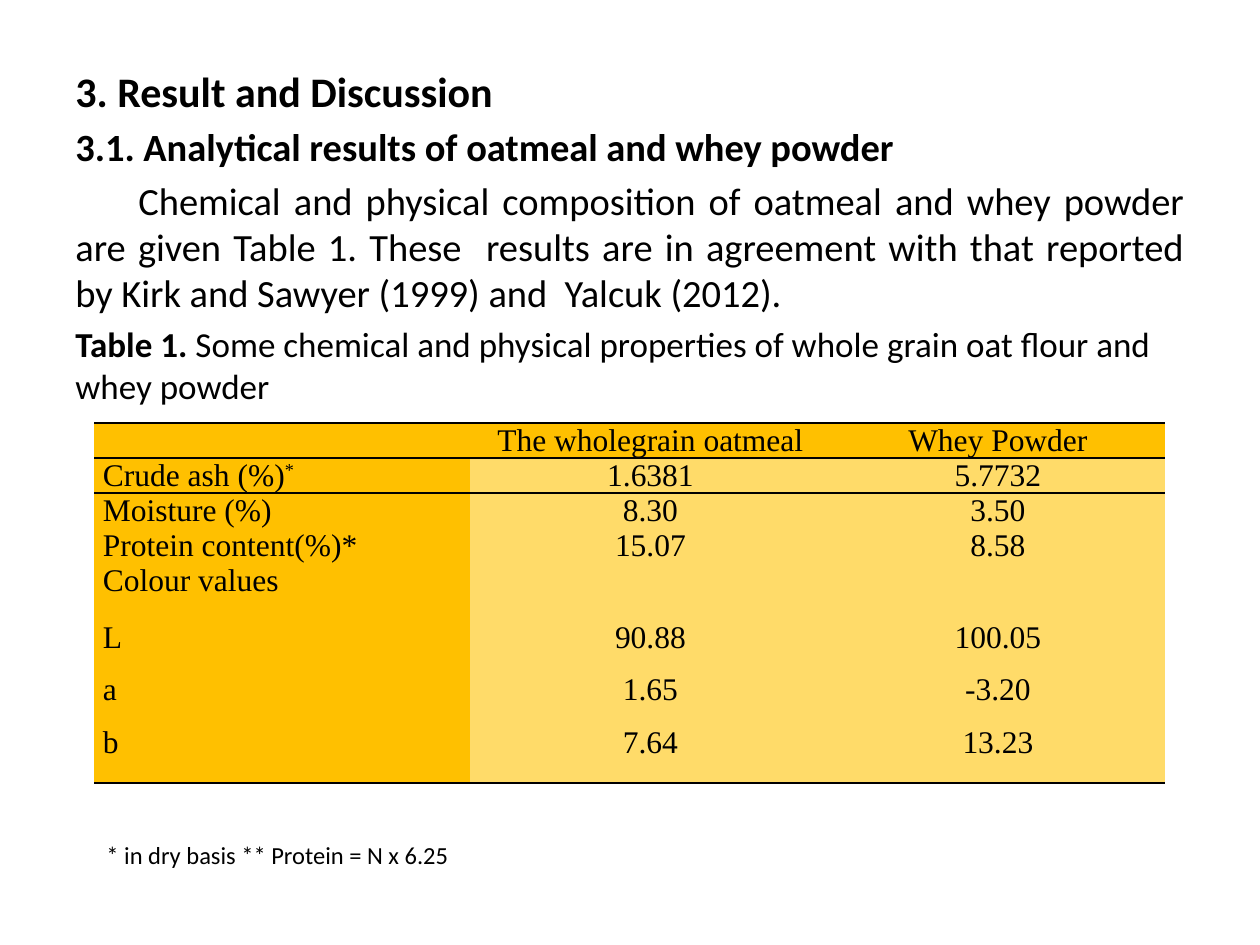
from dataclasses import dataclass

from lxml.etree import SubElement
from pptx import Presentation
from pptx.dml.color import RGBColor as Rgb
from pptx.enum.text import MSO_AUTO_SIZE as Fit, PP_ALIGN as Align
from pptx.oxml import parse_xml
from pptx.oxml.ns import nsdecls, qn
from pptx.util import Emu, Pt

SCALE = 914400 // 126
PLAIN = "{2D5ABB26-0587-4C30-8999-92F81FD0307C}"  # table style: no grid


def px(n):
    return Emu(n * SCALE)


@dataclass(frozen=True)
class Theme:
    ink: str = "000000"
    gold: str = "FFC000"
    pale: str = "FFDB69"
    sans: str = "Calibri"
    serif: str = "Times New Roman"
    head: int = 24
    body: int = 22
    label: int = 20
    cell: int = 18
    note: int = 14


class Deck:
    def __init__(self, theme):
        self.theme = theme
        self.prs = Presentation()
        self.prs.slide_width, self.prs.slide_height = px(1260), px(945)
        self.slide = self.prs.slides.add_slide(self.prs.slide_layouts[6])

    def run(self, para, text, size, face, bold=False):
        run = para.add_run()
        run.text = text
        font = run.font
        font.size, font.name, font.bold = Pt(size), face, bold
        font.color.rgb = Rgb.from_string(self.theme.ink)
        return run

    def text(self, box, paras, wrap=True, inset=6):
        """Each paragraph is (size, alignment, [(text, bold), ...])."""
        frame = self.slide.shapes.add_textbox(*map(px, box)).text_frame
        frame.word_wrap = wrap
        frame.auto_size = Fit.NONE if wrap else Fit.SHAPE_TO_FIT_TEXT
        frame.margin_top = px(inset)
        for i, (size, align, runs) in enumerate(paras):
            para = frame.add_paragraph() if i else frame.paragraphs[0]
            para.alignment = align
            para.space_before = Pt(size * 0.2 if i else 0)
            for text, bold in runs:
                self.run(para, text, size, self.theme.sans, bold)

    def edge(self, cell, sides):
        props = cell._tc.get_or_add_tcPr()
        for i, side in enumerate(sides):
            props.insert(i, parse_xml(
                f'<a:ln{side} {nsdecls("a")} w="12700"><a:solidFill>'
                f'<a:srgbClr val="{self.theme.ink}"/></a:solidFill></a:ln{side}>'))

    def cell(self, cell, text, align, fill):
        cell.margin_left = cell.margin_right = px(9)
        cell.margin_top = cell.margin_bottom = 0
        cell.fill.solid()
        cell.fill.fore_color.rgb = Rgb.from_string(fill)
        para = cell.text_frame.paragraphs[0]
        para.alignment = align
        size, face = self.theme.cell, self.theme.serif
        if not text:
            end = SubElement(para._p, qn("a:endParaRPr"), sz=str(size * 100))
            SubElement(end, qn("a:latin"), typeface=face)
            return
        main, _, mark = text.partition("^")
        self.run(para, main, size, face)
        if mark:
            self.run(para, mark, size, face).font._element.set("baseline", "30000")

    def table(self, left, top, cols, rows, data):
        """Text after ^ is set as superscript."""
        frame = self.slide.shapes.add_table(
            len(rows), len(cols), px(left), px(top), px(sum(cols)), px(sum(rows)))
        grid = frame.table
        grid._tbl.tblPr.find(qn("a:tableStyleId")).text = PLAIN
        for col, wide in zip(grid.columns, cols):
            col.width = px(wide)
        for row, high in zip(grid.rows, rows):
            row.height = px(high)
        edges = {0: "TB", 1: "T", len(rows) - 1: "B"}
        for r, line in enumerate(data):
            for c, text in enumerate(line):
                cell = grid.cell(r, c)
                fill = self.theme.pale if r and c else self.theme.gold
                self.cell(cell, text, Align.CENTER if c else Align.JUSTIFY, fill)
                self.edge(cell, edges.get(r, ""))


def main():
    theme = Theme()
    deck = Deck(theme)

    # Headings, paragraph and table caption
    deck.text((63, 55, 1134, 789), [
        (theme.head, Align.LEFT, [("3. Result and Discussion", True)]),
        (theme.body, Align.LEFT,
         [("3.1. Analytical results of oatmeal and whey powder", True)]),
        (theme.body, Align.JUSTIFY,
         [("\tChemical and physical composition of oatmeal and whey powder are "
           "given Table 1. These  results are in agreement with that reported "
           "by Kirk and Sawyer (1999) and  Yalcuk (2012).", False)]),
        (theme.label, Align.LEFT,
         [("Table 1. ", True),
          ("Some chemical and physical properties of whole grain oat flour "
           "and whey powder", False)]),
    ], inset=10)

    # Table of results
    deck.table(94, 423, [376, 361, 334], [35] * 4 + [57, 53, 53, 57], [
        ("", "The wholegrain oatmeal", "Whey Powder"),
        ("Crude ash (%)^*", "1.6381", "5.7732"),
        ("Moisture (%)", "8.30", "3.50"),
        ("Protein content(%)*", "15.07", "8.58"),
        ("Colour values", "", ""),
        ("L", "90.88", "100.05"),
        ("a", "1.65", "-3.20"),
        ("b", "7.64", "13.23"),
    ])

    # Footnote
    deck.text((94, 834, 370, 43), [
        (theme.note, Align.LEFT, [("* in dry basis ** Protein = N x 6.25", False)]),
    ], wrap=False)

    deck.prs.save("out.pptx")


if __name__ == "__main__":
    main()
